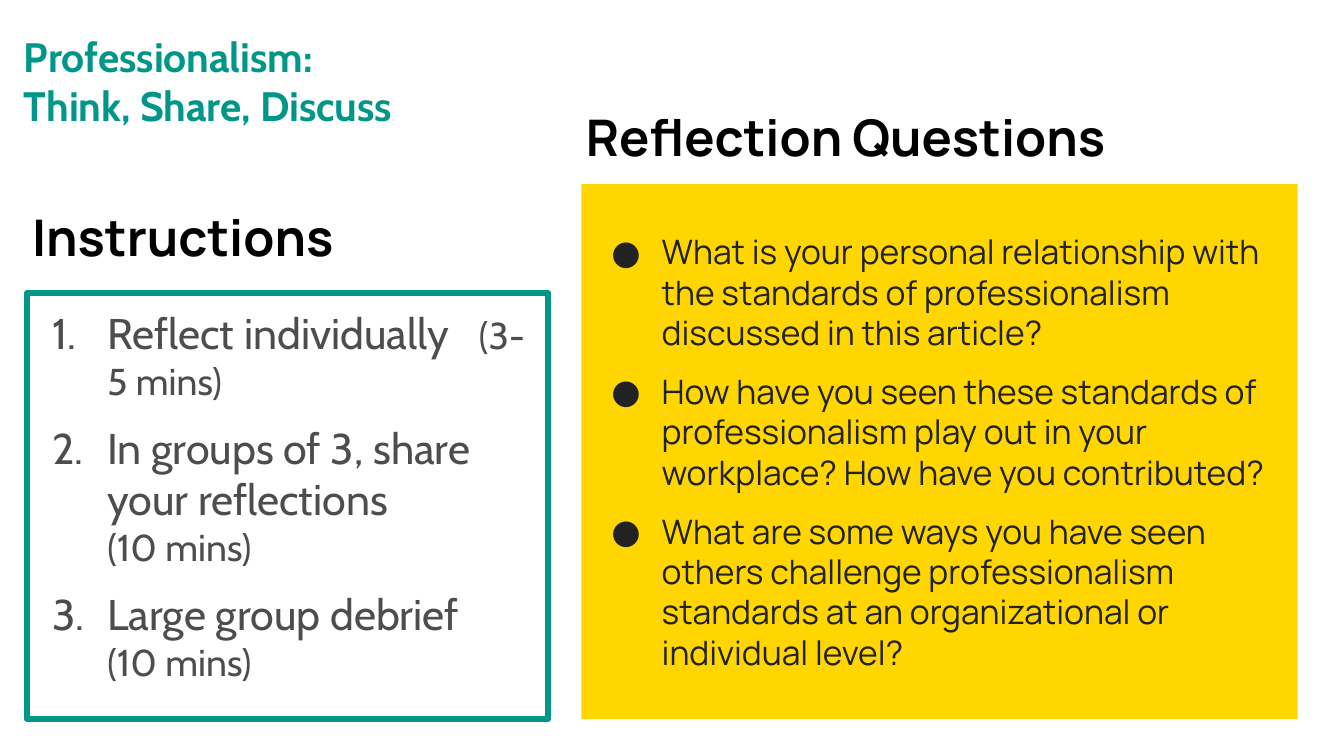
"""Build the "Think, Share, Discuss" slide on professionalism."""
from pptx import Presentation
from pptx.dml.color import RGBColor
from pptx.enum.shapes import MSO_SHAPE
from pptx.enum.text import MSO_ANCHOR, MSO_AUTO_SIZE, PP_ALIGN
from pptx.oxml.ns import qn
from pptx.util import Emu, Pt

PX = 4572
RECT = MSO_SHAPE.RECTANGLE
TOP, MIDDLE = MSO_ANCHOR.TOP, MSO_ANCHOR.MIDDLE
LEFT = PP_ALIGN.LEFT
NO_FIT = MSO_AUTO_SIZE.NONE

BLACK = RGBColor(0x00, 0x00, 0x00)
INK = RGBColor(0x22, 0x22, 0x22)
GREY = RGBColor(0x4C, 0x4D, 0x4C)
TEAL = RGBColor(0x00, 0x96, 0x88)
YELLOW = RGBColor(0xFF, 0xD6, 0x00)

HEADING = {"name": "Manrope", "size": Pt(27), "bold": True}
TOPIC = {"name": "Cabin", "size": Pt(22), "bold": True}
QUESTION = {"name": "Manrope", "size": Pt(18)}
STEP = {"name": "Cabin", "size": Pt(23)}
DURATION = {"name": "Cabin", "size": Pt(20)}
WIDE_SPACE = "1060"

QUESTIONS = [
    "What is your personal relationship with the standards of "
    "professionalism discussed in this article?",
    "How have you seen these standards of professionalism play out in your "
    "workplace? How have you contributed?",
    "What are some ways you have seen others challenge professionalism "
    "standards at an organizational or individual level?",
]
STEPS = [
    ("Reflect individually", "(3-5 mins)", False),
    ("In groups of 3, share your reflections", "(10 mins)", True),
    ("Large group debrief", "(10 mins)", True),
]


def px(*values):
    """Turn px lengths into EMU."""
    return [Emu(v * PX) for v in values]


def place(sp, box):
    """Set position and size from a px box."""
    for name, value in zip(("left", "top", "width", "height"), px(*box)):
        setattr(sp, name, value)


def setup_frame(sp, anchor):
    """Give the text frame even insets, wrapping and an anchor."""
    tf = sp.text_frame
    inset = px(20)[0]
    frame = {"word_wrap": True, "auto_size": NO_FIT, "vertical_anchor": anchor,
             "margin_left": inset, "margin_right": inset,
             "margin_top": inset, "margin_bottom": inset}
    for name, value in frame.items():
        setattr(tf, name, value)
    return tf


def add_run(p, text, fmt, color):
    """Append a formatted run."""
    r = p.add_run()
    r.text = text
    for name, value in fmt.items():
        setattr(r.font, name, value)
    r.font.color.rgb = color
    return r


def write_lines(sp, lines, fmt, color):
    """Write one left-aligned paragraph per line."""
    tf = setup_frame(sp, TOP)
    for i, line in enumerate(lines):
        p = tf.add_paragraph() if i else tf.paragraphs[0]
        p.alignment = LEFT
        add_run(p, line, fmt, color)


def add_panel(s, box, anchor, fill=None, line=None):
    """Add a plain rectangle and return its text frame."""
    sp = s.shapes.add_shape(RECT, *px(*box))
    sp.shadow.inherit = False
    if fill is None:
        sp.fill.background()
    else:
        sp.fill.solid()
        sp.fill.fore_color.rgb = fill
    if line is None:
        sp.line.fill.background()
    else:
        sp.line.color.rgb = line
        sp.line.width = Pt(3)
    return setup_frame(sp, anchor)


def list_item(tf, index, count, hang, font, marker, color):
    """Return a hanging-indent paragraph with a coloured list marker."""
    p = tf.add_paragraph() if index else tf.paragraphs[0]
    p.alignment = LEFT
    p.space_before = Pt(10 if index else 0)
    p.space_after = Pt(10 if index == count - 1 else 0)
    pPr = p._p.get_or_add_pPr()
    indent, first = px(100, -hang)
    pPr.set("marL", str(indent))
    pPr.set("indent", str(first))
    clr = pPr.makeelement(qn("a:buClr"), {})
    clr.append(clr.makeelement(qn("a:srgbClr"), {"val": str(color)}))
    typeface = pPr.makeelement(qn("a:buFont"), {"typeface": font})
    tag, attrs = marker
    pPr.extend([clr, typeface, pPr.makeelement(qn(tag), attrs)])
    return p


def write_questions(tf):
    """Fill the bulleted question list."""
    marker = ("a:buChar", {"char": "●"})
    for i, question in enumerate(QUESTIONS):
        p = list_item(tf, i, len(QUESTIONS), 75, "Manrope", marker, INK)
        add_run(p, question, QUESTION, INK)


def write_steps(tf):
    """Fill the numbered list of steps and their durations."""
    marker = ("a:buAutoNum", {"type": "arabicPeriod"})
    for i, (step, duration, own_line) in enumerate(STEPS):
        p = list_item(tf, i, len(STEPS), 82, "Cabin", marker, GREY)
        add_run(p, step, STEP, GREY)
        if own_line:
            p.add_line_break()
        else:
            gap = add_run(p, " ", STEP, GREY)
            gap.font._element.set("spc", WIDE_SPACE)
        add_run(p, duration, DURATION, GREY)


def main():
    """Build and save the slide."""
    prs = Presentation()
    prs.slide_width, prs.slide_height = px(2000, 1125)
    s = prs.slides.add_slide(prs.slide_layouts[5])

    title = s.shapes.title
    place(title, (852, 138, 1048, 136))
    write_lines(title, ["Reflection Questions"], HEADING, BLACK)
    write_questions(add_panel(s, (865, 274, 1066, 796), MIDDLE, fill=YELLOW))

    write_steps(add_panel(s, (40, 436, 776, 634), TOP, line=TEAL))
    heading = s.shapes.add_textbox(*px(28, 286, 1048, 136))
    write_lines(heading, ["Instructions"], HEADING, BLACK)

    topic = s.shapes.add_textbox(*px(16, 27, 836, 110))
    write_lines(topic, ["Professionalism:", "Think, Share, Discuss"],
                TOPIC, TEAL)
    prs.save("out.pptx")


if __name__ == "__main__":
    main()
